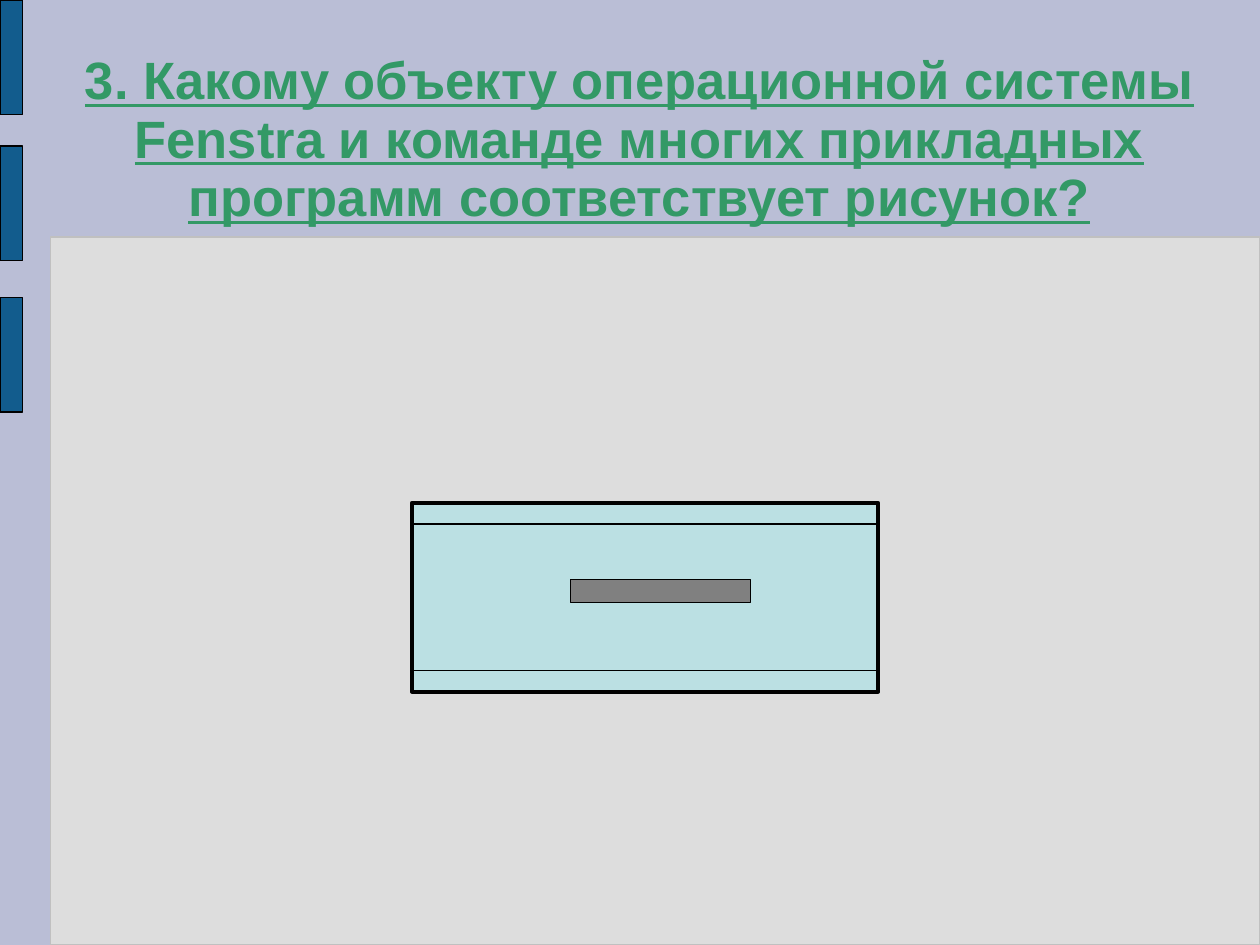
from pptx import Presentation
from pptx.dml.color import RGBColor
from pptx.enum import shapes, text
from pptx.oxml.ns import qn
from pptx.util import Inches, Pt
from lxml import etree

QUESTION = ("3. Какому объекту операционной системы Fenstra и команде многих "
            "прикладных программ соответствует рисунок?")

COLORS = {
    "background": "BABED6", "panel": "DDDDDD", "panel_edge": "C0C0C0",
    "tab": "125C8D", "title": "339966", "drawer": "BBE0E3",
    "handle": "808080", "outline": "000000",
}

# left, top, width, height in inches
PANEL = (0.4, 1.88, 9.6, 5.62)
TITLE = (0.35, 0, 9.45, 2.23)
DRAWER = (3.27, 3.99, 3.7, 1.5)
HANDLE = (4.53, 4.6, 1.43, 0.18)
RAIL_INSET = 0.17
TAB_SIZE = (0.18, 0.91)
TAB_TOPS = (0, 1.16, 2.36)


def color(name):
    return RGBColor.from_string(COLORS[name])


def add_box(parent, box, fill, edge="outline", width=0.75):
    shape = parent.add_shape(shapes.MSO_SHAPE.RECTANGLE, *map(Inches, box))
    shape.shadow.inherit = False
    shape.fill.solid()
    shape.fill.fore_color.rgb = color(fill)
    shape.line.color.rgb = color(edge)
    shape.line.width = Pt(width)


def add_rail(parent, y):
    """Draw a horizontal line across the drawer at height y."""
    left, _, width, _ = DRAWER
    rail = parent.add_connector(shapes.MSO_CONNECTOR.STRAIGHT,
                                *map(Inches, (left, y, left + width, y)))
    rail.line.color.rgb = color("outline")
    rail.line.width = Pt(0.75)
    etree.SubElement(rail.element.spPr, qn("a:effectLst"))


def format_title(title):
    title.left, title.top, title.width, title.height = map(Inches, TITLE)
    frame = title.text_frame
    frame.word_wrap = True
    frame.auto_size = text.MSO_AUTO_SIZE.NONE
    frame.vertical_anchor = text.MSO_ANCHOR.MIDDLE
    paragraph = frame.paragraphs[0]
    paragraph.alignment = text.PP_ALIGN.CENTER
    paragraph.line_spacing = 0.93
    question = paragraph.add_run()
    question.text = QUESTION
    font = question.font
    font.name, font.size = "Arial", Pt(30)
    font.bold = font.underline = True
    font.color.rgb = color("title")


def main():
    deck = Presentation()
    deck.slide_width, deck.slide_height = Inches(10), Inches(7.5)
    slide = deck.slides.add_slide(deck.slide_layouts[5])
    slide.background.fill.solid()
    slide.background.fill.fore_color.rgb = color("background")

    add_box(slide.shapes, PANEL, "panel", "panel_edge")
    for top in TAB_TOPS:
        add_box(slide.shapes, (0, top, *TAB_SIZE), "tab")

    title = slide.shapes.title
    format_title(title)
    slide.shapes.element.append(title.element)  # in front of the panel

    drawer = slide.shapes.add_group_shape().shapes
    add_box(drawer, DRAWER, "drawer", width=2.25)
    _, top, _, height = DRAWER
    for y in (top + RAIL_INSET, top + height - RAIL_INSET):
        add_rail(drawer, y)
    add_box(drawer, HANDLE, "handle")

    deck.save("out.pptx")


if __name__ == "__main__":
    main()
